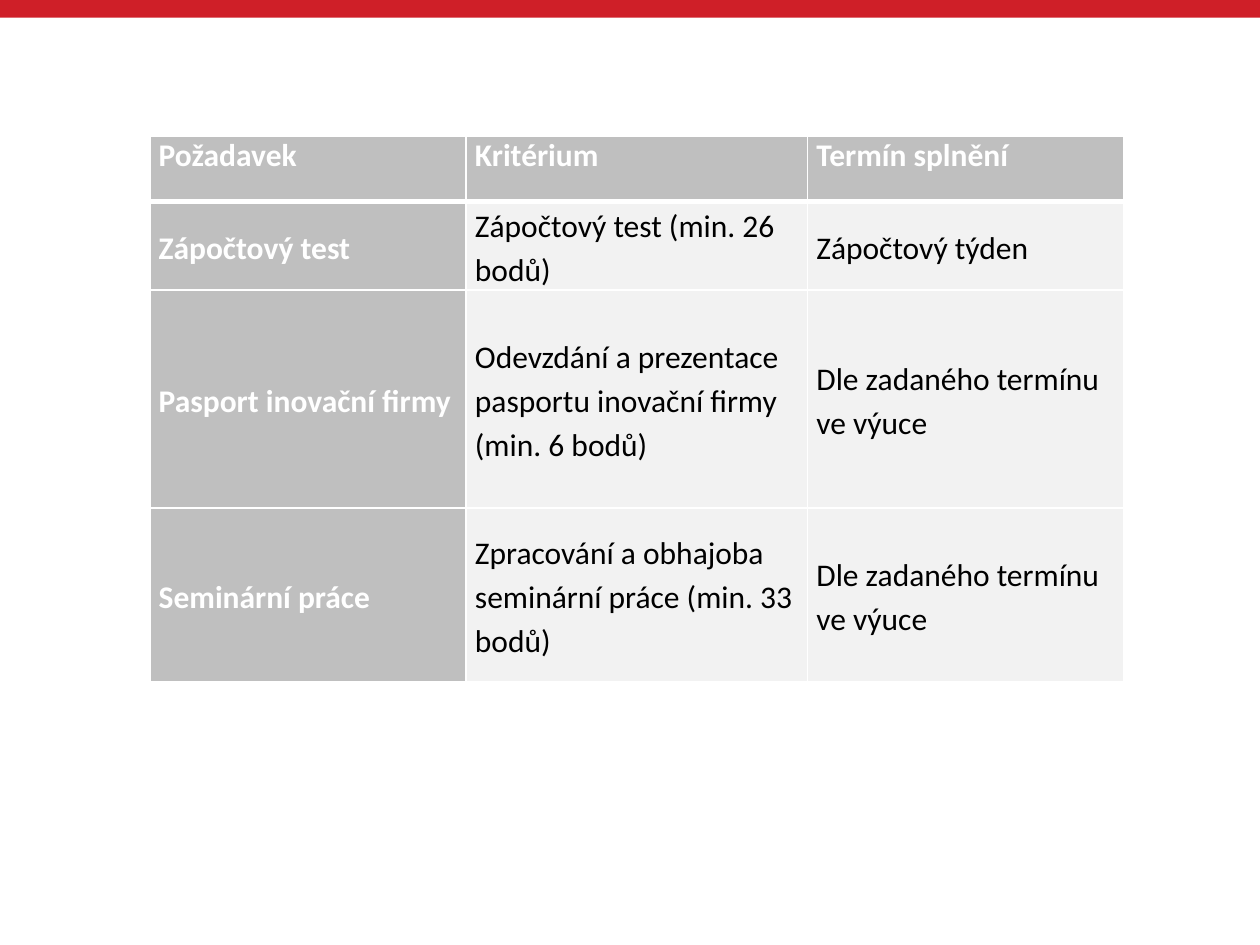
from lxml import etree
from pptx import Presentation
from pptx import util as u
from pptx.dml.color import RGBColor
from pptx.enum import shapes, text
from pptx.oxml import ns

COLORS = {"accent": "CF1F28", "heading": "BFBFBF", "body": "F2F2F2",
          "light": "FFFFFF", "dark": "000000"}

REQUIREMENTS = [
    ["Požadavek", "Kritérium", "Termín splnění"],
    ["Zápočtový test", "Zápočtový test (min. 26 bodů)", "Zápočtový týden"],
    ["Pasport inovační firmy",
     "Odevzdání a prezentace pasportu inovační firmy (min. 6 bodů)",
     "Dle zadaného termínu ve výuce"],
    ["Seminární práce", "Zpracování a obhajoba seminární práce (min. 33 bodů)",
     "Dle zadaného termínu ve výuce"],
]


class SlideBuilder:
    font = "Calibri"
    size = u.Pt(18)

    def __init__(self, slide):
        self.slide = slide

    def color(self, name):
        return RGBColor.from_string(COLORS[name])

    def bar(self, left, top, width, height):
        band = self.slide.shapes.add_shape(
            shapes.MSO_SHAPE.RECTANGLE,
            *(u.Inches(length) for length in (left, top, width, height)))
        band.shadow.inherit = False
        band.fill.solid()
        band.fill.fore_color.rgb = self.color("accent")
        band.line.fill.background()

    def borders(self, cell, widths):
        properties = cell._tc.get_or_add_tcPr()
        for position, (side, points) in enumerate(widths.items()):
            line = etree.Element(ns.qn(f"a:ln{side}"), w=str(u.Pt(points)))
            fill = etree.SubElement(line, ns.qn("a:solidFill"))
            etree.SubElement(fill, ns.qn("a:srgbClr"), val=COLORS["light"])
            properties.insert(position, line)

    def cell(self, cell, wording, is_header, is_heading, widths):
        cell.text = wording
        cell.margin_left = cell.margin_right = u.Inches(0.07)
        cell.margin_top = cell.margin_bottom = 0
        cell.fill.solid()
        cell.fill.fore_color.rgb = self.color("heading" if is_heading else "body")
        paragraph = cell.text_frame.paragraphs[0]
        if not is_header:
            cell.vertical_anchor = text.MSO_ANCHOR.MIDDLE
            paragraph.line_spacing = 1.15
        paragraph.font.name = self.font
        paragraph.font.size = self.size
        paragraph.font.bold = is_heading
        paragraph.font.color.rgb = self.color("light" if is_heading else "dark")
        self.borders(cell, widths)

    def table(self, left, top, columns, rows, wording):
        grid = self.slide.shapes.add_table(
            len(rows), len(columns), u.Inches(left), u.Inches(top),
            u.Inches(sum(columns)), u.Inches(sum(rows))).table
        for column, width in zip(grid.columns, columns):
            column.width = u.Inches(width)
        for row, height in zip(grid.rows, rows):
            row.height = u.Inches(height)
        for r, entries in enumerate(wording):
            widths = {"L": 1, "R": 1, "T": 3 if r == 1 else 1, "B": 3 if r == 0 else 1}
            for c, entry in enumerate(entries):
                self.cell(grid.cell(r, c), entry, r == 0, r == 0 or c == 0, widths)


def main():
    deck = Presentation()
    deck.slide_width, deck.slide_height = u.Inches(10), u.Inches(7.5)
    builder = SlideBuilder(deck.slides.add_slide(deck.slide_layouts[6]))
    builder.bar(0, 0, 10, 0.14)
    builder.table(1.19, 1.08, [2.51, 2.71, 2.51], [0.52, 0.68, 1.73, 1.38], REQUIREMENTS)
    deck.save("out.pptx")


if __name__ == "__main__":
    main()
